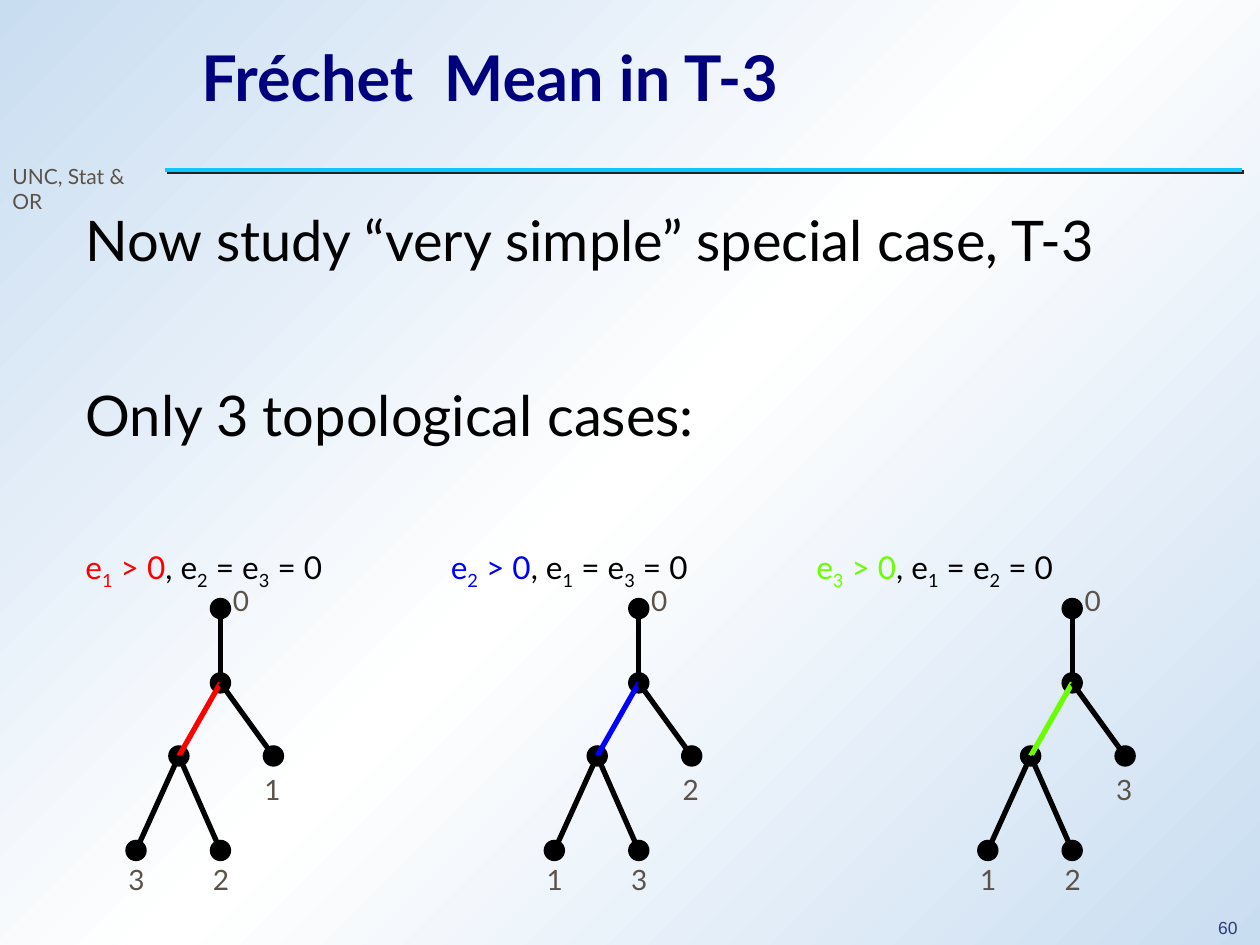
from dataclasses import dataclass

from lxml.etree import SubElement
from pptx import Presentation
from pptx.dml.color import RGBColor
from pptx.enum.shapes import MSO_CONNECTOR, MSO_SHAPE
from pptx.enum.text import MSO_ANCHOR
from pptx.oxml.ns import qn
from pptx.util import Inches, Pt


@dataclass(frozen=True)
class Theme:
    font: str = "Lato"
    number_font: str = "Arial"
    title: str = "00007F"
    ink: str = "000000"
    muted: str = "5B5249"
    number: str = "2A3D7A"
    rule: str = "0FC7FF"
    rule_shadow: str = "232323"
    background: tuple = ((0, "C9DDF1"), (50, "FFFFFF"), (100, "C9DDF1"))
    title_size: int = 36
    body_size: int = 32
    case_size: int = 18
    label_size: int = 16
    footer_size: int = 12
    number_size: int = 10


THEME = Theme()

# Node positions: x relative to the root, y on the slide
NODES = {
    "root": (0, 4.83),
    "fork": (0, 5.42),
    "inner": (-0.33, 6),
    "left": (-0.67, 6.75),
    "right": (0.42, 6),
    "middle": (0, 6.75),
}
EDGES = [("root", "fork"), ("fork", "inner"), ("inner", "middle"),
         ("inner", "left"), ("fork", "right")]
# Top left corner of each label, relative to its node
LABEL_OFFSETS = {"root": (0, -0.25), "right": (-0.17, 0.08),
                 "middle": (-0.16, 0.05), "left": (-0.16, 0.05)}
DOT = 0.17

# Root x, colour, indices of the positive and the two zero edges, leaf labels
CASES = [
    (1.75, "FF0000", "123", {"right": "1", "middle": "2", "left": "3"}),
    (5.07, "0000FF", "213", {"right": "2", "middle": "3", "left": "1"}),
    (8.51, "69FF00", "312", {"right": "3", "middle": "2", "left": "1"}),
]
CASE_PITCH = 2.9


def rgb(color):
    return RGBColor.from_string(color)


def style_run(r, size, color, font=THEME.font, bold=False):
    r.font.size = Pt(size)
    r.font.name = font
    r.font.bold = bold
    r.font.color.rgb = rgb(color)


def set_background(s):
    fill = s.background.fill
    fill.gradient()
    fill.gradient_angle = 315  # counter-clockwise: top left to bottom right
    stops = s.element.find(".//" + qn("a:gsLst"))
    for stop in list(stops):
        stops.remove(stop)
    for position, color in THEME.background:
        stop = SubElement(stops, qn("a:gs"), pos=str(position * 1000))
        SubElement(stop, qn("a:srgbClr"), val=color)


def add_box(s, left, top, width, height, wrap=True):
    tf = s.shapes.add_textbox(Inches(left), Inches(top),
                              Inches(width), Inches(height)).text_frame
    tf.word_wrap = wrap
    return tf


def add_text(s, text, box, size, color, wrap=True, **style):
    tf = add_box(s, *box, wrap=wrap)
    tf.text = text
    style_run(tf.paragraphs[0].runs[0], size, color, **style)
    return tf


def add_line(s, start, end, color, width):
    """Draw a straight line and return its empty effect list."""
    line = s.shapes.add_connector(MSO_CONNECTOR.STRAIGHT,
                                  *map(Inches, start + end))
    line.line.color.rgb = rgb(color)
    line.line.width = Pt(width)
    return SubElement(line.element.spPr, qn("a:effectLst"))


def add_rule(s):
    effects = add_line(s, (1.31, 1.35), (9.86, 1.35), THEME.rule, 2.25)
    shadow = SubElement(effects, qn("a:outerShdw"), dist=str(Pt(1.4)),
                        dir="2700000", algn="ctr", rotWithShape="0")
    SubElement(shadow, qn("a:srgbClr"), val=THEME.rule_shadow)


def add_dot(s, x, y):
    dot = s.shapes.add_shape(MSO_SHAPE.OVAL, Inches(x - DOT / 2),
                             Inches(y - DOT / 2), Inches(DOT), Inches(DOT))
    dot.shadow.inherit = False
    dot.fill.solid()
    dot.fill.fore_color.rgb = rgb(THEME.ink)
    dot.line.fill.background()


def add_tree(s, root_x, color, leaves):
    nodes = {name: (root_x + x, y) for name, (x, y) in NODES.items()}
    for x, y in nodes.values():
        add_dot(s, x, y)
    for start, end in EDGES:
        highlighted = (start, end) == ("fork", "inner")
        add_line(s, nodes[start], nodes[end],
                 color if highlighted else THEME.ink, 3)
    for name, text in {"root": "0", **leaves}.items():
        (x, y), (dx, dy) = nodes[name], LABEL_OFFSETS[name]
        add_text(s, text, (x + dx, y + dy, 0.32, 0.37),
                 THEME.label_size, THEME.muted, wrap=False)


def add_case_runs(p, color, indices):
    """Write one condition, with the edge indices as subscripts."""
    positive, first, second = indices
    parts = [("e", positive, color), (" > 0", "", color),
             (", e", first, THEME.ink), (" = e", second, THEME.ink),
             (" = 0", "", THEME.ink)]
    for text, index, ink in parts:
        r = p.add_run()
        r.text = text
        style_run(r, THEME.case_size, ink)
        if index:
            r = p.add_run()
            r.text = index
            style_run(r, THEME.case_size, ink)
            r.font._element.set("baseline", "-25000")


def add_body(s):
    tf = add_box(s, 0.58, 1.42, 9.08, 3.3)
    tf.text = ("Now study “very simple” special case, T-3\n"
               "Only 3 topological cases:")
    for p in tf.paragraphs:
        style_run(p.runs[0], THEME.body_size, THEME.ink)
    p = tf.add_paragraph()
    for i, (_, color, indices, _) in enumerate(CASES):
        if i:
            r = p.add_run()
            r.text = "\t"
            style_run(r, THEME.case_size, THEME.ink)
        add_case_runs(p, color, indices)
    for i, paragraph in enumerate(tf.paragraphs):
        paragraph.line_spacing = 1.3
        paragraph.space_before = Pt(50 if i else 0)
    tabs = SubElement(p._p.get_or_add_pPr(), qn("a:tabLst"))
    for i in range(1, len(CASES)):
        SubElement(tabs, qn("a:tab"), pos=str(Inches(i * CASE_PITCH)), algn="l")


def main():
    prs = Presentation()
    prs.slide_width, prs.slide_height = Inches(10), Inches(7.5)
    s = prs.slides.add_slide(prs.slide_layouts[6])
    set_background(s)
    add_rule(s)
    number = add_text(s, "60", (9.57, 7.25, 0.37, 0.25), THEME.number_size,
                      THEME.number, wrap=False, font=THEME.number_font)
    number.paragraphs[0].line_spacing = 0.9
    add_text(s, "UNC, Stat & OR", (0, 1.25, 1.35, 0.3),
             THEME.footer_size, THEME.muted)
    title = add_text(s, "Fréchet  Mean in T-3", (1.5, 0.17, 8.08, 0.87),
                     THEME.title_size, THEME.title, bold=True)
    title.vertical_anchor = MSO_ANCHOR.MIDDLE
    add_body(s)
    for root_x, color, _, leaves in CASES:
        add_tree(s, root_x, color, leaves)
    prs.save("out.pptx")


if __name__ == "__main__":
    main()
